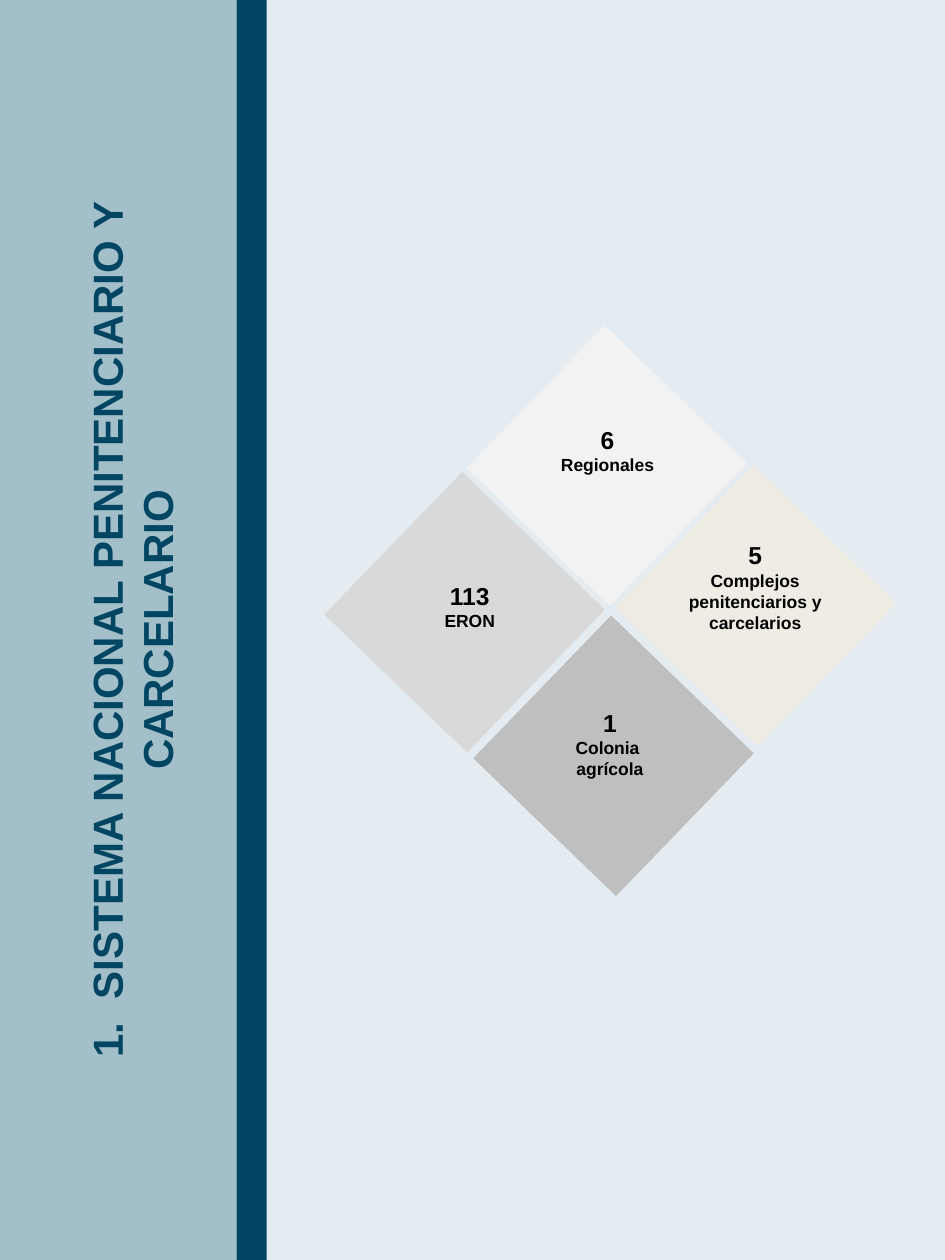
import pptx
import pptx.util
import pptx.dml.color
import pptx.enum.shapes
import pptx.enum.text

Pt = pptx.util.Pt
RGB = pptx.dml.color.RGBColor
RECT = pptx.enum.shapes.MSO_SHAPE.RECTANGLE
TEXT = pptx.enum.text

PALE = RGB(0xE4, 0xEC, 0xF1)
TEAL = RGB(0xA3, 0xBF, 0xC9)
NAVY = RGB(0x00, 0x46, 0x63)
BLACK = RGB(0, 0, 0)
WHITE = RGB(0xF2, 0xF2, 0xF2)
CREAM = RGB(0xEF, 0xED, 0xE3)
SILVER = RGB(0xD9, 0xD9, 0xD9)
GREY = RGB(0xBF, 0xBF, 0xBF)

FONT = "Arial"
WIDE, HIGH = 540, 720
TITLE = "1.  SISTEMA NACIONAL PENITENCIARIO Y CARCELARIO"
LONG, DEEP, MID = 590.4, 72.7, 78.9
BANDS = [(135.2, TEAL), (17.2, NAVY)]
SIDE, TURN = 113.4, 44
LABEL = 99.4
TILES = [
    (290.2, 209.4, WHITE, "6", ["Regionales"], (297.4, 239.2, 42.5)),
    (375.2, 289.4, CREAM, "5", ["Complejos penitenciarios y carcelarios"],
     (381.8, 305.2, 61.9)),
    (208.8, 293.1, SILVER, "113", ["ERON"], (218.7, 328.4, 42.5)),
    (293.9, 375.2, GREY, "1", ["Colonia ", "agrícola"], (298.8, 401, 49)),
]


def block(slide, left, top, wide, high, color):
    shape = slide.shapes.add_shape(RECT, Pt(left), Pt(top), Pt(wide), Pt(high))
    shape.shadow.inherit = False
    shape.fill.solid()
    shape.fill.fore_color.rgb = color
    shape.line.fill.background()
    return shape


def write(frame, lines, color):
    frame.word_wrap = True
    frame.auto_size = TEXT.MSO_AUTO_SIZE.NONE
    frame.vertical_anchor = TEXT.MSO_ANCHOR.TOP
    for index, (words, size) in enumerate(lines):
        para = frame.add_paragraph() if index else frame.paragraphs[0]
        para.alignment = TEXT.PP_ALIGN.CENTER
        run = para.add_run()
        run.text = words
        run.font.name = FONT
        run.font.size = Pt(size)
        run.font.bold = True
        run.font.color.rgb = color


deck = pptx.Presentation()
deck.slide_width, deck.slide_height = Pt(WIDE), Pt(HIGH)
slide = deck.slides.add_slide(deck.slide_layouts[5])
slide.background.fill.solid()
slide.background.fill.fore_color.rgb = PALE

left = 0
for wide, color in BANDS:
    block(slide, left, 0, wide, HIGH, color)
    left += wide

title = slide.shapes.title
title.left, title.top = Pt(MID - LONG / 2), Pt((HIGH - DEEP) / 2)
title.width, title.height = Pt(LONG), Pt(DEEP)
title.rotation = 270
write(title.text_frame, [(TITLE, 24)], NAVY)
title.element.getparent().append(title.element)

for left, top, color, *rest in TILES:
    block(slide, left, top, SIDE, SIDE, color).rotation = TURN

for *rest, count, names, (left, top, high) in TILES:
    box = slide.shapes.add_textbox(Pt(left), Pt(top), Pt(LABEL), Pt(high))
    write(box.text_frame, [(count, 14)] + [(name, 10) for name in names], BLACK)

deck.save("out.pptx")
